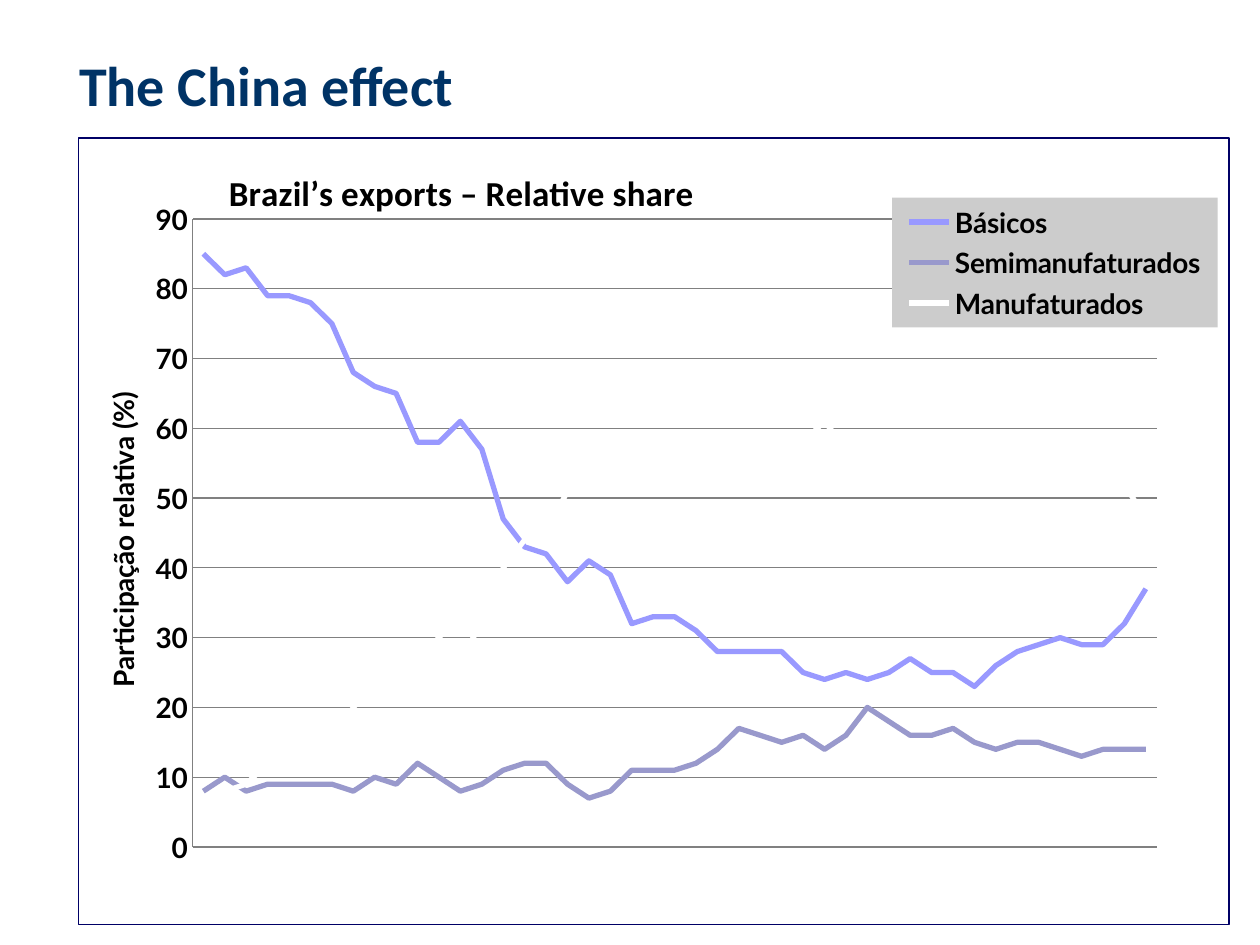
import pptx
import pptx.chart.data
import pptx.dml.color
import pptx.enum.chart
import pptx.enum.text
import pptx.oxml
import pptx.oxml.ns
import pptx.util
from pptx.util import Inches

RGBColor = pptx.dml.color.RGBColor
NAVY = RGBColor(0x00, 0x33, 0x66)
BORDER = RGBColor(0x00, 0x00, 0x66)
BLACK = RGBColor(0x00, 0x00, 0x00)
GRAY = RGBColor(0x80, 0x80, 0x80)
SILVER = RGBColor(0xCC, 0xCC, 0xCC)
PERIWINKLE = RGBColor(0x99, 0x99, 0xFF)
LAVENDER = RGBColor(0x99, 0x99, 0xCC)
WHITE = RGBColor(0xFF, 0xFF, 0xFF)

YEARS = [str(y) if y != 2003 else "2003 " for y in range(1964, 2009)]
SERIES = [
    ("Básicos", PERIWINKLE,
     [85, 82, 83, 79, 79, 78, 75, 68, 66, 65, 58, 58, 61, 57, 47,
      43, 42, 38, 41, 39, 32, 33, 33, 31, 28, 28, 28, 28, 25, 24,
      25, 24, 25, 27, 25, 25, 23, 26, 28, 29, 30, 29, 29, 32, 37]),
    ("Semimanufaturados", LAVENDER,
     [8, 10, 8, 9, 9, 9, 9, 8, 10, 9, 12, 10, 8, 9, 11,
      12, 12, 9, 7, 8, 11, 11, 11, 12, 14, 17, 16, 15, 16, 14,
      16, 20, 18, 16, 16, 17, 15, 14, 15, 15, 14, 13, 14, 14, 14]),
    ("Manufaturados", WHITE,
     [6, 8, 9, 12, 11, 12, 15, 20, 23, 23, 27, 30, 27, 32, 40,
      44, 45, 51, 51, 51, 56, 55, 56, 57, 57, 54, 54, 56, 58, 61,
      57, 55, 55, 55, 57, 57, 59, 57, 55, 54, 55, 55, 54, 52, 47]),
]


def set_font(font, size, name="Lato", color=BLACK, bold=True):
    """Format a font."""
    font.size = pptx.util.Pt(size)
    font.name = name
    font.bold = bold
    font.color.rgb = color


def write_text(tf, text, **fmt):
    """Write one formatted run into a text frame."""
    r = tf.paragraphs[0].add_run()
    r.text = text
    set_font(r.font, **fmt)


def chart_xml(body):
    """Make a chart element from markup."""
    tag, rest = body.split(" ", 1)
    nsdecls = pptx.oxml.ns.nsdecls("c", "a")
    return pptx.oxml.parse_xml(f"<c:{tag} {nsdecls} {rest}")


def place(element, index, x, y, w=None, h=None, inner=False):
    """Give a chart part a manual layout in fractions of the chart."""
    for old in element.findall(pptx.oxml.ns.qn("c:layout")):
        element.remove(old)
    target = '<c:layoutTarget val="inner"/>' if inner else ""
    modes = '<c:xMode val="edge"/><c:yMode val="edge"/>'
    sizes = "".join(f'<c:{k} val="{v}"/>' for k, v in zip("xywh", (x, y, w, h))
                    if v is not None)
    element.insert(index, chart_xml(
        f"layout ><c:manualLayout>{target}{modes}{sizes}</c:manualLayout></c:layout>"))


def set_line(line, color, width):
    """Format a line."""
    line.color.rgb = color
    line.width = pptx.util.Pt(width)


def add_title(slide, text):
    """Add the slide heading."""
    sp = slide.shapes.add_textbox(Inches(0.53), Inches(0.25), Inches(8.92), Inches(0.83))
    tf = sp.text_frame
    tf.word_wrap = True
    tf.vertical_anchor = pptx.enum.text.MSO_ANCHOR.MIDDLE
    write_text(tf, text, size=32, name="Calibri", color=NAVY)


def format_axes(chart):
    """Format both axes and the gridlines."""
    none = pptx.enum.chart.XL_TICK_MARK.NONE
    for axis in (chart.category_axis, chart.value_axis):
        axis.major_tick_mark = axis.minor_tick_mark = none
        set_line(axis.format.line, GRAY, 0.75)
    chart.category_axis.tick_label_position = pptx.enum.chart.XL_TICK_LABEL_POSITION.NONE
    axis = chart.value_axis
    axis.minimum_scale, axis.maximum_scale, axis.major_unit = 0, 90, 10
    axis.tick_labels.number_format = "#,##0"
    axis.tick_labels.number_format_is_linked = False
    set_line(axis.major_gridlines.format.line, GRAY, 0.75)
    title = axis.axis_title
    write_text(title.text_frame, "Participação relativa (%)", size=16)
    place(title._element, 1, 0.017, 0.317)


def format_legend(chart):
    """Place the legend over the plot on a grey panel."""
    chart.has_legend = True
    legend = chart.legend
    legend.position = pptx.enum.chart.XL_LEGEND_POSITION.RIGHT
    legend.include_in_layout = False
    set_font(legend.font, 16)
    place(legend._element, 1, 0.707, 0.076, 0.283, 0.165)
    legend._element.find(pptx.oxml.ns.qn("c:txPr")).addprevious(chart_xml(
        f'spPr ><a:solidFill><a:srgbClr val="{SILVER}"/></a:solidFill></c:spPr>'))


def format_frame(chart):
    """Draw the square border round the chart."""
    root = chart._chartSpace
    root.insert(1, chart_xml('roundedCorners val="0"/>'))
    root.find(pptx.oxml.ns.qn("c:chart")).addnext(chart_xml(
        f'spPr ><a:noFill/><a:ln w="{pptx.util.Pt(0.75)}"><a:solidFill>'
        f'<a:srgbClr val="{BORDER}"/></a:solidFill></a:ln></c:spPr>'))


def add_line_chart(slide):
    """Add the export share chart."""
    data = pptx.chart.data.CategoryChartData()
    data.categories = YEARS
    for name, _, values in SERIES:
        data.add_series(name, values)
    chart = slide.shapes.add_chart(
        pptx.enum.chart.XL_CHART_TYPE.LINE, Inches(0.62), Inches(1.09),
        Inches(9.14), Inches(6.25), data).chart
    set_font(chart.font, 16)
    chart.has_title = True
    write_text(chart.chart_title.text_frame, "Brazil’s exports – Relative share",
               size=20, name="Calibri")
    place(chart.chart_title._element, 1, 0.125, 0.03)
    plot = chart.plots[0]
    plot.vary_by_categories = False
    for s, (_, color, _) in zip(plot.series, SERIES):
        s.smooth = False
        s.marker.style = pptx.enum.chart.XL_MARKER_STYLE.NONE
        set_line(s.format.line, color, 3)
    format_axes(chart)
    format_legend(chart)
    format_frame(chart)
    plot_area = chart._chartSpace.chart.plotArea
    place(plot_area, 0, 0.099, 0.103, 0.838, 0.799, inner=True)


def main():
    """Build the slide."""
    prs = pptx.Presentation()
    prs.slide_width, prs.slide_height = Inches(10), Inches(7.5)
    slide = prs.slides.add_slide(prs.slide_layouts[6])
    add_line_chart(slide)
    add_title(slide, "The China effect")
    prs.save("out.pptx")


if __name__ == "__main__":
    main()
